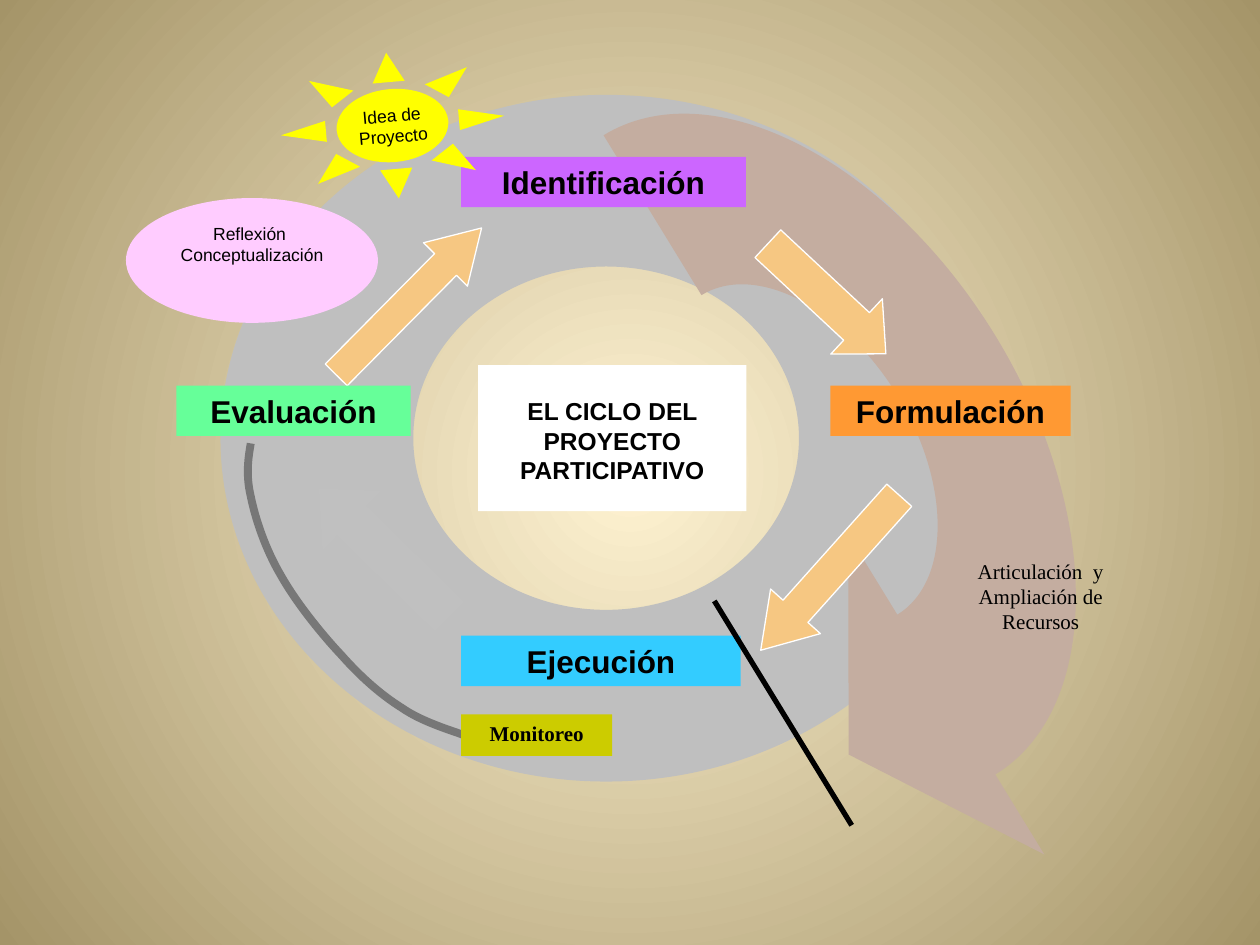
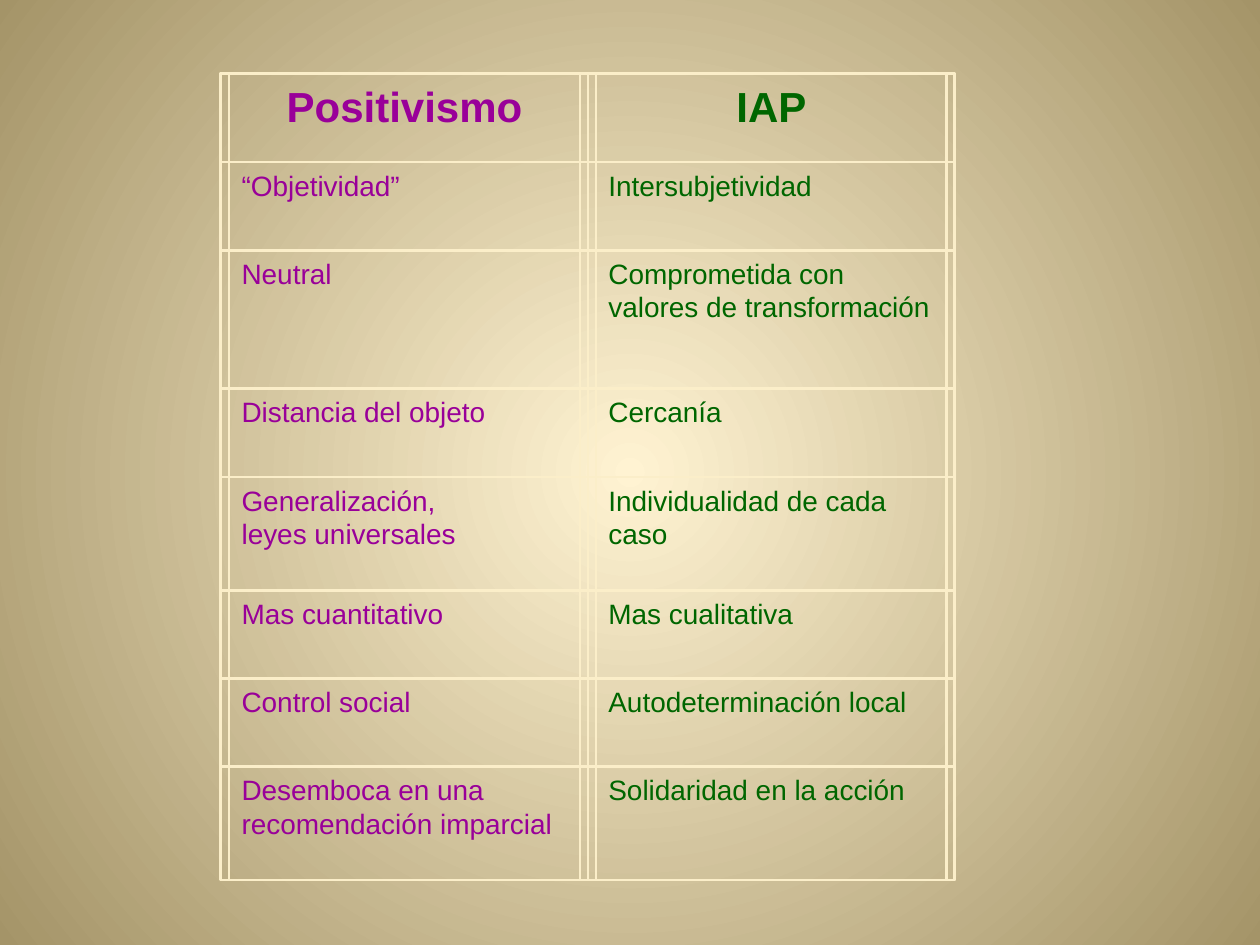
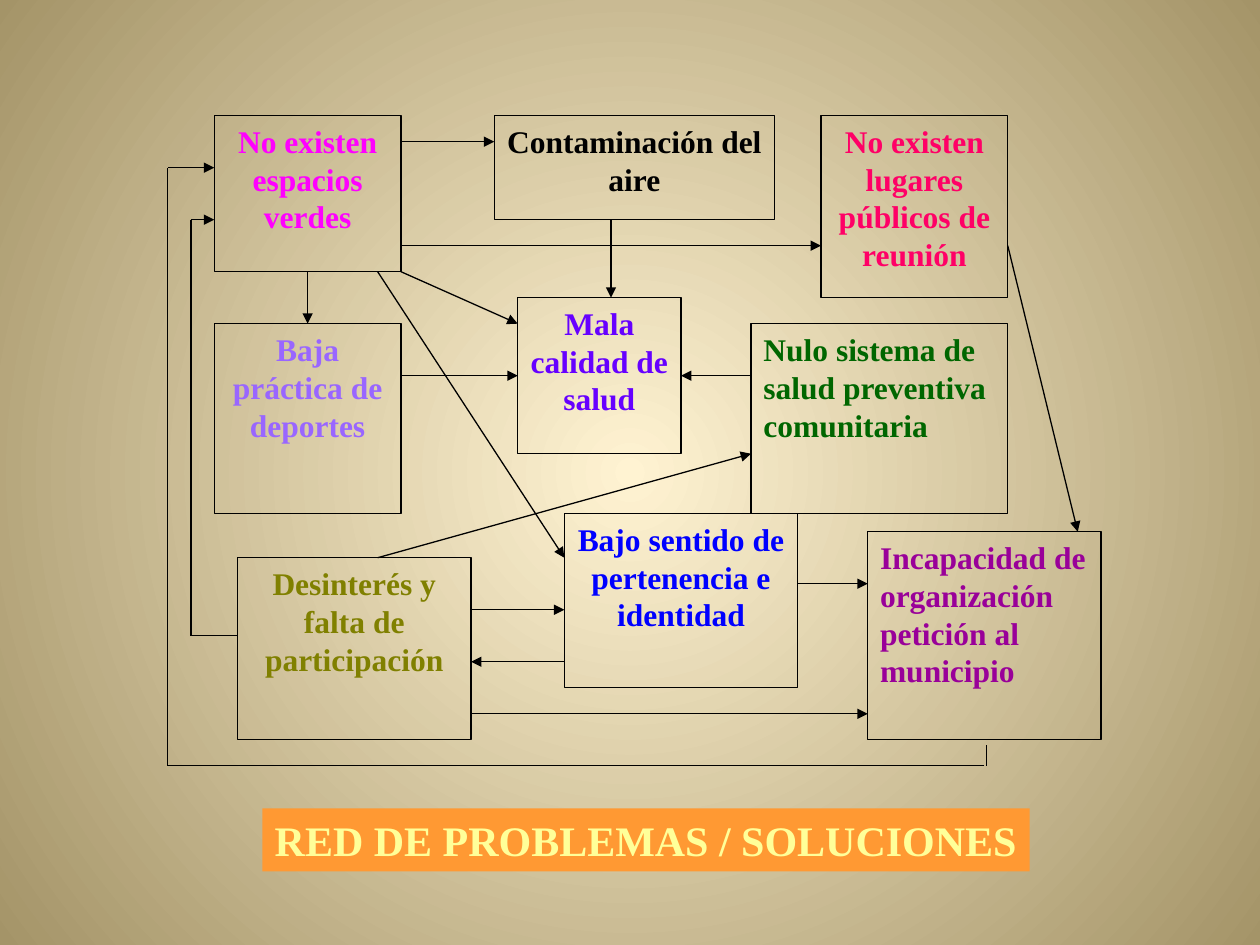
"""Build three slides on participatory projects: a cycle, a comparison and a network."""
from itertools import accumulate

from lxml.etree import SubElement
from pptx import Presentation
from pptx.dml.color import RGBColor
from pptx.enum.shapes import MSO_CONNECTOR as CONN, MSO_SHAPE as SHAPE
from pptx.enum.text import MSO_ANCHOR as ANCHOR, PP_ALIGN as ALIGN
from pptx.oxml.ns import qn
from pptx.util import Pt

SANS, SERIF = "Arial", "Times New Roman"
BLACK, WHITE, CREAM = "000000", "FFFFFF", "FBEEC9"
PURPLE, GREEN, ORANGE = "990099", "006600", "FF9933"
BACKDROP = ("FFF3D2", "A49468")
LABEL = dict(name=SANS, size=Pt(18), bold=True)
SMALL = dict(name=SANS, size=Pt(10))
NOTE = dict(name=SERIF, size=Pt(12))
NODE = dict(name=SERIF, size=Pt(18), bold=True)
ROUND = 0.55


def rgb(value):
    """Turn a hex string into a colour."""
    return RGBColor.from_string(value)


def put(obj, values):
    """Set each attribute of an object from a dict."""
    for key, value in values.items():
        setattr(obj, key, value)


def paint(shape, fill=None, line=None, width=0.75):
    """Give a shape its fill and outline, without a shadow."""
    shape.shadow.inherit = False
    if fill:
        shape.fill.solid()
        shape.fill.fore_color.rgb = rgb(fill)
    else:
        shape.fill.background()
    if line:
        shape.line.color.rgb = rgb(line)
        shape.line.width = Pt(width)
    else:
        shape.line.fill.background()


def write(tf, text, font, color=BLACK, align=ALIGN.CENTER):
    """Write one paragraph for each line of the text."""
    for i, line in enumerate(text.split("\n")):
        p = tf.add_paragraph() if i else tf.paragraphs[0]
        p.alignment = align
        r = p.add_run()
        r.text = line
        put(r.font, font)
        r.font.color.rgb = rgb(color)


def block(s, box, text="", font=None, color=BLACK, kind=SHAPE.RECTANGLE,
          fill=None, line=None, width=0.75, align=ALIGN.CENTER, **frame):
    """Add a preset shape with text set from its top."""
    sp = s.shapes.add_shape(kind, *map(Pt, box))
    paint(sp, fill, line, width)
    if text:
        put(sp.text_frame, dict(word_wrap=True, vertical_anchor=ANCHOR.TOP) | frame)
        write(sp.text_frame, text, font, color, align)
    return sp


def connect(s, start, end, width=0.75, arrow=False):
    """Join two points with a straight line, with or without an arrowhead."""
    c = s.shapes.add_connector(CONN.STRAIGHT, *map(Pt, (*start, *end)))
    c.line.color.rgb = rgb(BLACK)
    c.line.width = Pt(width)
    if arrow:
        SubElement(c.line._get_or_add_ln(), qn("a:tailEnd"), type="triangle")
    SubElement(c.element.spPr, qn("a:effectLst"))


def outline(s, box, steps):
    """Build a freeform over a box from move, line, curve and close steps."""
    x, y, w, h = map(Pt, box)
    builder = s.shapes.build_freeform(x, y, scale=1.0)
    builder.add_line_segments([(x + w, y), (x + w, y + h), (x, y + h)])
    sp = builder.convert_to_shape()
    track = sp.element.find(".//" + qn("a:path"))
    for child in list(track):
        track.remove(child)
    for name, *points in steps:
        step = SubElement(track, qn("a:" + name))
        for px, py in points:
            SubElement(step, qn("a:pt"), x=str(Pt(px)), y=str(Pt(py)))
    return sp


def quarter(start, end, upright):
    """Give the curve step of a quarter ellipse that leaves upright or level."""
    (ax, ay), (bx, by) = start, end
    dx, dy = (bx - ax) * ROUND, (by - ay) * ROUND
    if upright:
        return "cubicBezTo", (ax, ay + dy), (bx - dx, by), end
    return "cubicBezTo", (ax + dx, ay), (bx, by - dy), end


def ellipse(cx, cy, rx, ry):
    """Give the steps of a closed ellipse."""
    points = [(cx - rx, cy), (cx, cy - ry), (cx + rx, cy), (cx, cy + ry), (cx - rx, cy)]
    arcs = [quarter(a, b, i % 2 == 0) for i, (a, b) in enumerate(zip(points, points[1:]))]
    return [("moveTo", points[0]), *arcs, ("close",)]


def backdrop(master):
    """Give every slide the round gradient background."""
    fill = master.background.fill
    fill.gradient()
    for stop, color in zip(fill.gradient_stops, BACKDROP):
        stop.color.rgb = rgb(color)
    grad = master.element.find(".//" + qn("p:bgPr")).find(qn("a:gradFill"))
    for lin in grad.findall(qn("a:lin")):
        grad.remove(lin)
    around = SubElement(grad, qn("a:path"), path="circle")
    SubElement(around, qn("a:fillToRect"), l="50000", t="50000", r="50000", b="50000")


def ring(s, x, y, w, h):
    """Draw the grey ring with a hole half its size."""
    cx, cy = w / 2, h / 2
    steps = ellipse(cx, cy, cx, cy) + ellipse(cx, cy, cx / 2, cy / 2)
    paint(outline(s, (x, y, w, h), steps), "BFBFBF")


def sweep(s, x, y, w, h):
    """Draw the wide arched arrow, turned to the right of the ring."""
    cx, cy = w / 2, h / 2
    steps = [("moveTo", (w * 0.75, cy)),
             quarter((w * 0.75, cy), (cx, h / 4), True),
             quarter((cx, h / 4), (w / 4, cy), False),
             ("lnTo", (0, cy)),
             quarter((0, cy), (cx, 0), True),
             quarter((cx, 0), (w, cy), False),
             ("lnTo", (w * 1.125, cy)),
             ("lnTo", (w * 0.875, h * 0.75)),
             ("lnTo", (w * 0.625, cy)),
             ("close",)]
    sp = outline(s, (x, y, w, h), steps)
    paint(sp, "C4ADA0")
    sp.rotation = 58.5


def monitoring(s, x, y, w, h):
    """Draw the curve from evaluation to monitoring."""
    curves = [((1.4, 8.7), (0, 18), (2.9, 30.3)),
              ((5.5, 43.2), (11.3, 60.5), (20.2, 75.6)),
              ((28.8, 90.8), (43.2, 108.8), (54.7, 121)),
              ((66.2, 134), (77.8, 144), (89.3, 151.2)),
              ((100.8, 159.2), (118.1, 164.2), (w, h))]
    steps = [("moveTo", (2.9, 0))] + [("cubicBezTo", *points) for points in curves]
    paint(outline(s, (x, y, w, h), steps), line="777777", width=4.5)


def cycle(s, x, y):
    """Place the parts of the project cycle."""
    stages = [("Identificación", 191.5, 59.6, 162.7, "CC66FF"),
              ("Formulación", 402.5, 190.4, 137.3, ORANGE),
              ("Ejecución", 191.5, 333.3, 159.8, "33CCFF")]
    arrows = [(378.9, 94.6, 43.2, 92.2, 313, 0.53, "F6C782", WHITE),
              (383.2, 237.9, 38.2, 118.8, 41.8, 0.78, "F6C782", WHITE),
              (123.8, 233.5, 47.5, 104.4, 134.4, 0.55, "C0C0C0", None),
              (144, 83.2, 35.3, 118.1, 224.7, 0.83, "F6C782", WHITE)]
    ring(s, x + 54, y + 24.2, 440.8, 392.4)
    sweep(s, x + 170.6, y + 98.9, 428.4, 262.1)
    for text, dx, dy, w, fill in stages:
        block(s, (x + dx, y + dy, w, 28.8), text, LABEL, fill=fill)
    for dx, dy, w, h, turn, tip, fill, line in arrows:
        sp = block(s, (x + dx, y + dy, w, h), kind=SHAPE.DOWN_ARROW, fill=fill, line=line)
        sp.rotation = turn
        sp.adjustments[0], sp.adjustments[1] = 0.5, tip
    tf = s.shapes.add_textbox(*map(Pt, (x + 469.4, y + 285.4, 106.6, 51.1))).text_frame
    tf.word_wrap = True
    write(tf, "Articulación  y Ampliación de Recursos", NOTE)
    connect(s, (x + 336.2, y + 313.4), (x + 414.7, y + 441.6), width=3)
    block(s, (x + 201.2, y + 178.6, 153.4, 83.5), "EL CICLO DEL PROYECTO PARTICIPATIVO",
          LABEL | dict(size=Pt(14)), fill=WHITE, margin_top=Pt(17.8))
    monitoring(s, x + 68.4, y + 223.4, 123.8, 166.4)
    block(s, (x, y + 83.2, 144, 71.3), "Reflexión  Conceptualización", SMALL,
          kind=SHAPE.OVAL, fill="FFCCFF")
    sun = block(s, (x + 88.3, y, 128, 83.5), "Idea de Proyecto", SMALL, kind=SHAPE.SUN,
                fill="FFFF00", vertical_anchor=ANCHOR.MIDDLE, margin_left=0,
                margin_right=0, margin_top=0, margin_bottom=0)
    sun.rotation = -5
    block(s, (x + 191.5, y + 378.2, 86.4, 23.8), "Monitoreo", NOTE | dict(bold=True),
          fill="CCCC00")
    block(s, (x + 28.8, y + 190.4, 133.9, 28.8), "Evaluación", LABEL, fill="66FF99")


def comparison(s, x, y, w):
    """Place the two columns of double-framed cells and the frame around them."""
    rows = [("Positivismo", "IAP", 50.4),
            ("“Objetividad”", "Intersubjetividad", 50.4),
            ("Neutral", "Comprometida con valores de transformación", 79.2),
            ("Distancia del objeto", "Cercanía", 50.4),
            ("Generalización,\nleyes universales", "Individualidad de cada caso", 64.8),
            ("Mas cuantitativo", "Mas cualitativa", 50.4),
            ("Control social", "Autodeterminación local", 50.4),
            ("Desemboca en una recomendación imparcial", "Solidaridad en la acción", 64.8)]
    group = s.shapes.add_group_shape()
    col, gap = w / 2, 4.6
    edge = dict(line=CREAM, width=1.5)
    tops = list(accumulate((row[2] for row in rows), initial=y))
    for i, (*texts, h) in enumerate(rows):
        font = dict(name=SANS, size=Pt(16 if i else 24), bold=not i)
        align = ALIGN.LEFT if i else ALIGN.CENTER
        for j, (text, color) in enumerate(zip(texts, (PURPLE, GREEN))):
            left = x + j * col
            block(group, (left + gap, tops[i], col - 2 * gap, h), text, font, color,
                  align=align, **edge)
            block(group, (left, tops[i], col, h), **edge)
    block(group, (x - 0.4, y - 0.4, w + 0.4, tops[-1] - y + 0.4), **edge)


def network(s, x, y, w, h):
    """Place the problems and their links on a grid of 40 by 25 units."""
    ux, uy = w / 40, h / 25
    problems = [("No existen espacios verdes", 2, 0, 8, 6, "FF00FF"),
                ("Contaminación del aire", 14, 0, 12, 4, BLACK),
                ("Mala calidad de salud", 15, 7, 7, 6, "6600FF"),
                ("Baja práctica de deportes", 2, 8, 8, 7.3, "9966FF"),
                ("Desinterés y falta de participación", 3, 17, 10, 7, "808000"),
                ("Bajo sentido de pertenencia e identidad", 17, 15.3, 10, 6.7, "0000FF"),
                ("Nulo sistema de salud preventiva comunitaria", 25, 8, 11, 7.3, GREEN),
                ("No existen lugares públicos de reunión", 28, 0, 8, 7, "FF0066"),
                ("Incapacidad de organización  petición al municipio", 30, 16, 10, 8, PURPLE)]
    links = [[(10, 1), (14, 1)], [(6, 6), (6, 8)], [(19, 4), (19, 7)],
             [(10, 10), (15, 10)], [(10, 5), (28, 5)], [(13, 19), (17, 19)],
             [(17, 21), (13, 21)], [(3, 20), (1, 20), (1, 4), (2, 4)],
             [(13, 23), (30, 23)], [(25, 10), (22, 10)], [(9, 17), (25, 13)],
             [(36, 5), (39, 16)], [(35, 25), (0, 25), (0, 2), (2, 2)],
             [(10, 6), (15, 8)], [(27, 18), (30, 18)], [(9, 6), (17, 17)]]

    def at(gx, gy):
        """Turn grid units into a place on the slide."""
        return x + gx * ux, y + gy * uy

    group = s.shapes.add_group_shape()
    for text, gx, gy, gw, gh, color in problems:
        block(group, (*at(gx, gy), gw * ux, gh * uy), text, NODE, color, line=BLACK,
              align=ALIGN.LEFT if color in (GREEN, PURPLE) else ALIGN.CENTER)
    for link in links:
        for start, end in zip(link, link[1:]):
            connect(group, at(*start), at(*end), arrow=end == link[-1])
    connect(s, at(35.1, 25), at(35.1, 24.2))


def banner(s, x, y, w, h):
    """Place the title band under the network."""
    block(s, (x, y, w, h), "RED DE PROBLEMAS / SOLUCIONES", NODE | dict(size=Pt(24)),
          "FFFF99", fill=ORANGE, align=ALIGN.LEFT, word_wrap=False)


def main():
    """Build and save the presentation."""
    prs = Presentation()
    put(prs, dict(slide_width=Pt(720), slide_height=Pt(540)))
    backdrop(prs.slide_master)
    first, second, third = [prs.slides.add_slide(prs.slide_layouts[6]) for _ in range(3)]
    cycle(first, 72, 30)
    comparison(second, 126.4, 42.2, 419.2)
    network(third, 95.8, 66.1, 533.4, 371.5)
    banner(third, 149.9, 462, 438.5, 36)
    prs.save("out.pptx")


if __name__ == "__main__":
    main()
